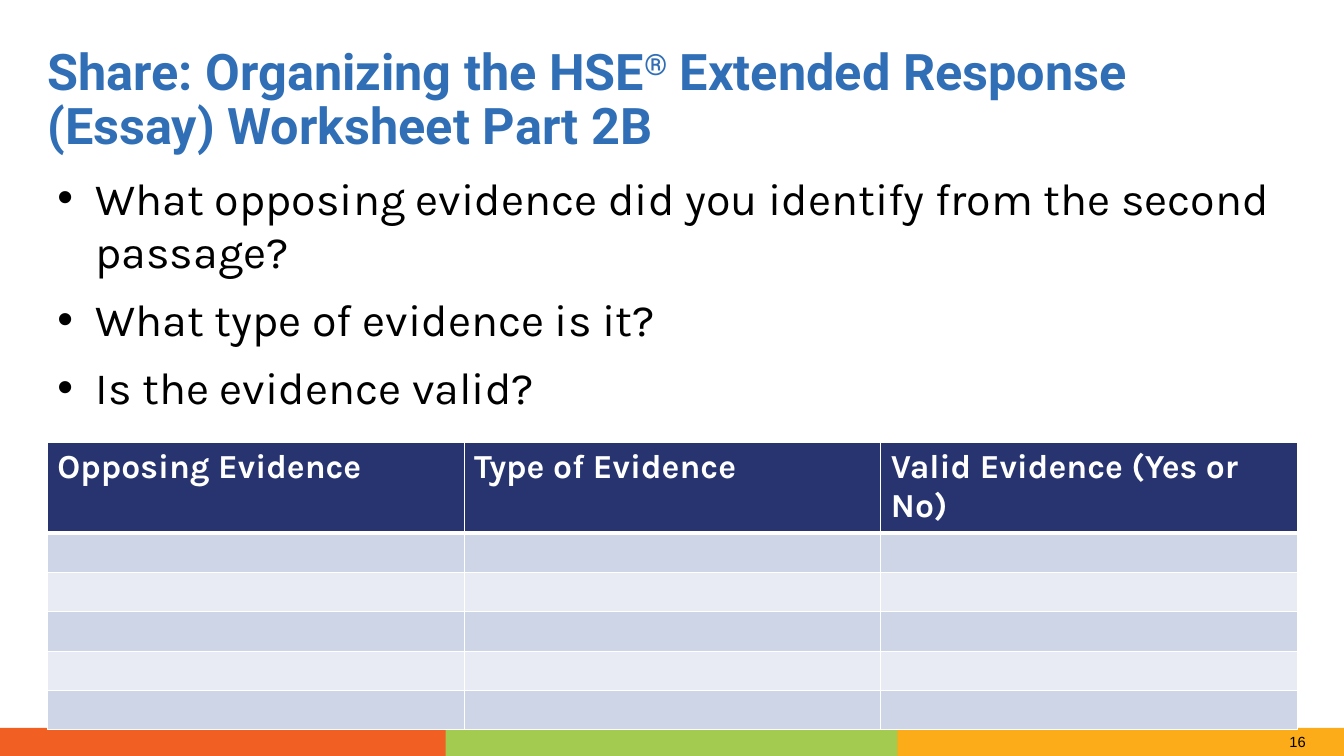
"""Build the worksheet sharing slide with its evidence table."""
from dataclasses import dataclass

from lxml import etree
from pptx import Presentation
from pptx import util as u
from pptx.dml.color import RGBColor
from pptx.enum import shapes, text
from pptx.oxml.ns import qn


@dataclass(frozen=True)
class Theme:
    title: dict
    body: dict
    header: dict
    number: dict
    header_fill: str = "27346F"
    bands: tuple = ("CDD5E6", "E8EBF3")
    border: str = "FFFFFF"
    bars: tuple = ("FBAC18", "F15F22", "A2CB4F")


theme = Theme(
    title={"name": "Roboto", "size": u.Pt(36), "bold": True, "color": "306EB6"},
    body={"name": "Karla", "size": u.Pt(32), "bold": False, "color": "000000"},
    header={"name": "Karla", "size": u.Pt(24), "bold": True, "color": "FFFFFF"},
    number={"name": "Arial", "size": u.Pt(10.5), "bold": False, "color": "000000"},
)


def add_run(paragraph, words, style):
    run = paragraph.add_run()
    run.text = words
    for name, value in style.items():
        if name == "color":
            run.font.color.rgb = RGBColor.from_string(value)
        else:
            setattr(run.font, name, value)
    return run


def add_border(cell, side, points):
    line = etree.SubElement(cell._tc.get_or_add_tcPr(), qn(f"a:{side}"), w=str(u.Pt(points)))
    fill = etree.SubElement(line, qn("a:solidFill"))
    etree.SubElement(fill, qn("a:srgbClr"), val=theme.border)


presentation = Presentation()
presentation.slide_width = u.Inches(13.33)
presentation.slide_height = u.Inches(7.5)
slide = presentation.slides.add_slide(presentation.slide_layouts[5])
left, width = u.Inches(0.47), u.Inches(12.4)
bar_top, bar_height = u.Inches(7.22), u.Inches(0.28)

bar_spans = [(8.89, 4.44), (0, 4.44), (4.42, 4.48)]
for (bar_left, bar_width), color in zip(bar_spans, theme.bars):
    bar = slide.shapes.add_shape(
        shapes.MSO_SHAPE.RECTANGLE, u.Inches(bar_left), bar_top, u.Inches(bar_width), bar_height)
    bar.shadow.inherit = False
    bar.fill.solid()
    bar.fill.fore_color.rgb = RGBColor.from_string(color)
    bar.line.fill.background()

number = slide.shapes.add_textbox(u.Inches(12.69), bar_top, u.Inches(0.38), bar_height)
number.text_frame.word_wrap = True
number.text_frame.paragraphs[0].alignment = text.PP_ALIGN.LEFT
add_run(number.text_frame.paragraphs[0], "16", theme.number)

title = slide.shapes.title
title.left, title.top, title.width, title.height = left, u.Inches(0.77), width, u.Inches(0.47)
frame_format = {
    "margin_left": 0, "margin_top": 0, "margin_right": 0, "margin_bottom": 0,
    "word_wrap": True, "auto_size": text.MSO_AUTO_SIZE.NONE,
    "vertical_anchor": text.MSO_ANCHOR.MIDDLE,
}
for name, value in frame_format.items():
    setattr(title.text_frame, name, value)
paragraph = title.text_frame.paragraphs[0]
paragraph.alignment = text.PP_ALIGN.LEFT
paragraph.line_spacing = 0.9
add_run(paragraph, "Share: Organizing the HSE", theme.title)
mark = add_run(paragraph, "®", theme.title)
mark._r.get_or_add_rPr().set("baseline", "30000")
add_run(paragraph, " Extended Response (Essay) Worksheet Part 2B", theme.title)

questions = [
    "What opposing evidence did you identify from the second passage?",
    "What type of evidence is it?",
    "Is the evidence valid?",
]
body = slide.shapes.add_textbox(left, u.Inches(1.64), width, u.Inches(2.54))
body.text_frame.word_wrap = True
indent = u.Inches(0.38)
for index, question in enumerate(questions):
    paragraph = body.text_frame.add_paragraph() if index else body.text_frame.paragraphs[0]
    paragraph.space_before = u.Pt(10)
    properties = paragraph._p.get_or_add_pPr()
    properties.set("marL", str(indent))
    properties.set("indent", str(-indent))
    etree.SubElement(properties, qn("a:buFont"), typeface="Arial")
    etree.SubElement(properties, qn("a:buChar"), char="•")
    add_run(paragraph, question, theme.body)

headings = ["Opposing Evidence", "Type of Evidence", "Valid Evidence (Yes or No)"]
row_count = 6
table_top, header_height = u.Inches(4.39), u.Inches(0.88)
row_height = (bar_top - table_top - header_height) // (row_count - 1)
table = slide.shapes.add_table(
    row_count, len(headings), left, table_top, width, bar_top - table_top).table
for row_index, row in enumerate(table.rows):
    row.height = row_height if row_index else header_height
    for column_index, heading in enumerate(headings):
        cell = table.cell(row_index, column_index)
        for side in ("lnL", "lnR", "lnT", "lnB"):
            header_edge = (row_index, side) in ((0, "lnB"), (1, "lnT"))
            add_border(cell, side, 3 if header_edge else 1)
        color = theme.bands[(row_index - 1) % 2] if row_index else theme.header_fill
        cell.fill.solid()
        cell.fill.fore_color.rgb = RGBColor.from_string(color)
        if row_index:
            cell.margin_top = cell.margin_bottom = u.Inches(0.02)
        else:
            add_run(cell.text_frame.paragraphs[0], heading, theme.header)

presentation.save("out.pptx")
